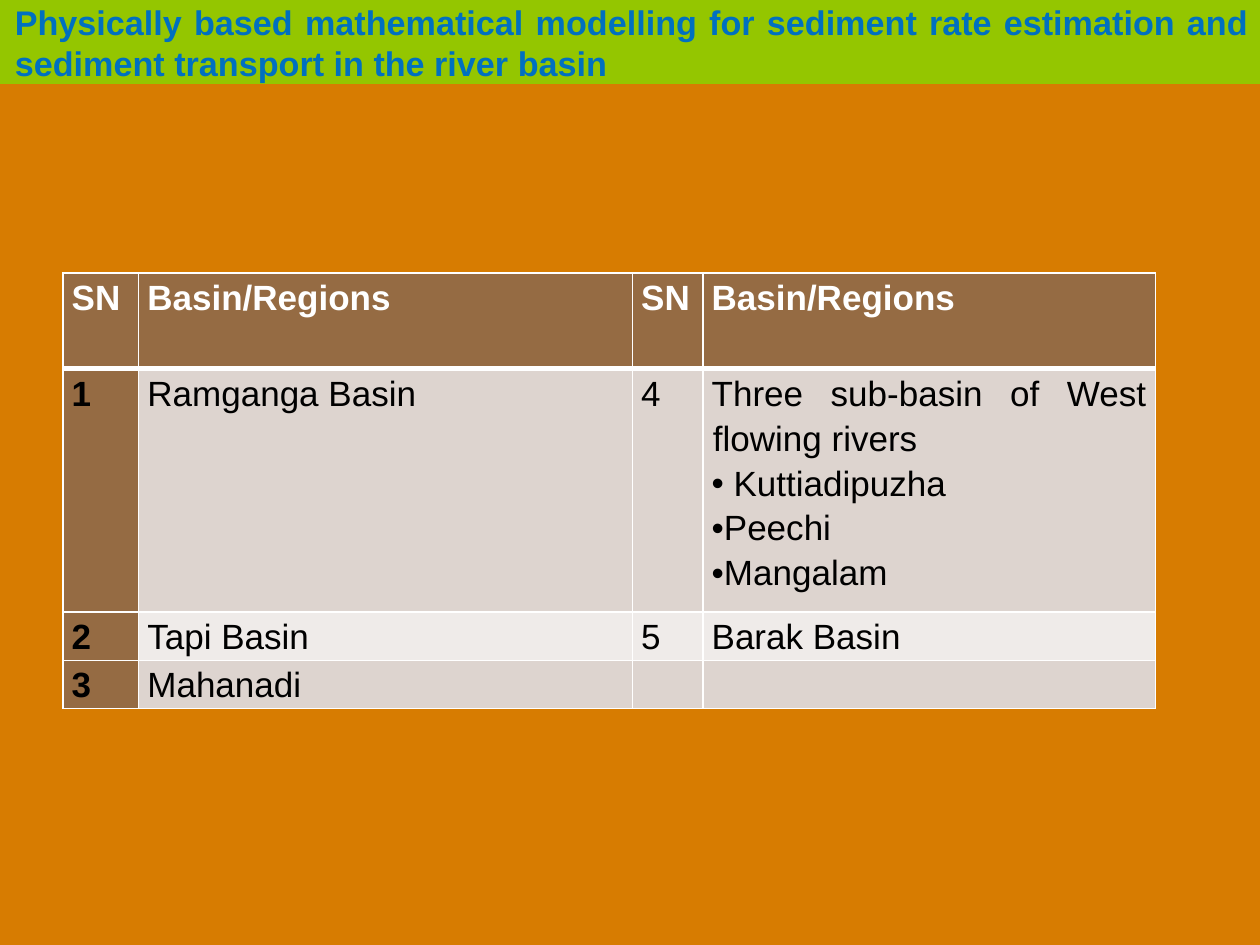
from lxml.etree import SubElement
from pptx import Presentation
from pptx.dml.color import RGBColor
from pptx.enum.shapes import MSO_SHAPE
from pptx.enum.text import MSO_ANCHOR, PP_ALIGN
from pptx.oxml.ns import qn
from pptx.util import Pt

COLORS = {
    "background": "D77C01",
    "banner": "94C600",
    "title": "0070C0",
    "brown": "956B43",
    "band_dark": "DDD4CF",
    "band_light": "EFEBE9",
    "white": "FFFFFF",
    "black": "000000",
}
FONT = "Arial"
TITLE = ("Physically based mathematical modelling for sediment rate "
         "estimation and sediment transport in the river basin")
COL_WIDTHS = [43.2, 282.2, 40.3, 258.5]
ROW_HEIGHTS = [54.7, 139, 26.6, 26.6]
ROWS = [
    ["SN", "Basin/Regions", "SN", "Basin/Regions"],
    ["1", "Ramganga Basin", "4",
     ["Three sub-basin of West flowing rivers",
      "• Kuttiadipuzha", "•Peechi", "•Mangalam"]],
    ["2", "Tapi Basin", "5", "Barak Basin"],
    ["3", "Mahanadi", "", ""],
]


def rgb(name):
    return RGBColor.from_string(COLORS[name])


def add_run(p, text, size, color, bold):
    r = p.add_run()
    r.text = text
    r.font.name = FONT
    r.font.size = Pt(size)
    r.font.bold = bold
    r.font.color.rgb = rgb(color)


def add_banner(s):
    sp = s.shapes.add_shape(MSO_SHAPE.RECTANGLE, 0, 0, Pt(720), Pt(48))
    sp.shadow.inherit = False
    sp.fill.solid()
    sp.fill.fore_color.rgb = rgb("banner")
    sp.line.fill.background()


def add_title(s):
    sp = s.shapes.add_textbox(Pt(1.4), Pt(-12), Pt(720), Pt(72))
    tf = sp.text_frame
    tf.word_wrap = True
    tf.vertical_anchor = MSO_ANCHOR.MIDDLE
    p = tf.paragraphs[0]
    p.alignment = PP_ALIGN.JUSTIFY
    add_run(p, TITLE, 19.5, "title", True)


def set_border(cell, side, width):
    ln = SubElement(cell._tc.get_or_add_tcPr(), qn(f"a:ln{side}"), w=str(Pt(width)))
    fill = SubElement(ln, qn("a:solidFill"))
    SubElement(fill, qn("a:srgbClr"), val=COLORS["white"])


def format_paragraph(p, bulleted):
    p.alignment = PP_ALIGN.JUSTIFY
    p.line_spacing = 1.15
    pPr = p._p.get_or_add_pPr()
    pPr.set("marL", str(Pt(0.72)))
    pPr.set("indent", str(-Pt(0.72)))
    if bulleted:
        SubElement(pPr, qn("a:buFont"), typeface=FONT)
        SubElement(pPr, qn("a:buChar"), char="•")


def fill_cell(cell, content, row, col):
    cell.margin_left = cell.margin_right = Pt(5)
    cell.margin_top = cell.margin_bottom = 0
    thick = {0: "B", 1: "T"}.get(row)
    for side in "LRTB":
        set_border(cell, side, 3 if side == thick else 1)
    header = row == 0
    band = "band_dark" if row % 2 else "band_light"
    cell.fill.solid()
    cell.fill.fore_color.rgb = rgb("brown" if header or col == 0 else band)
    lines = content if isinstance(content, list) else [content]
    tf = cell.text_frame
    for i, line in enumerate(lines):
        p = tf.add_paragraph() if i else tf.paragraphs[0]
        format_paragraph(p, line.startswith("•"))
        if line:
            add_run(p, line.removeprefix("•"), 20,
                    "white" if header else "black", header or col == 0)


def add_basin_table(s):
    table = s.shapes.add_table(
        len(ROWS), len(COL_WIDTHS), Pt(36), Pt(156),
        Pt(sum(COL_WIDTHS)), Pt(sum(ROW_HEIGHTS))).table
    table.first_col = True
    for column, width in zip(table.columns, COL_WIDTHS):
        column.width = Pt(width)
    for row, height in zip(table.rows, ROW_HEIGHTS):
        row.height = Pt(height)
    for i, row in enumerate(ROWS):
        for j, content in enumerate(row):
            fill_cell(table.cell(i, j), content, i, j)


def main():
    prs = Presentation()
    prs.slide_width, prs.slide_height = Pt(720), Pt(540)
    s = prs.slides.add_slide(prs.slide_layouts[6])
    s.background.fill.solid()
    s.background.fill.fore_color.rgb = rgb("background")
    add_banner(s)
    add_title(s)
    add_basin_table(s)
    prs.save("out.pptx")


if __name__ == "__main__":
    main()
